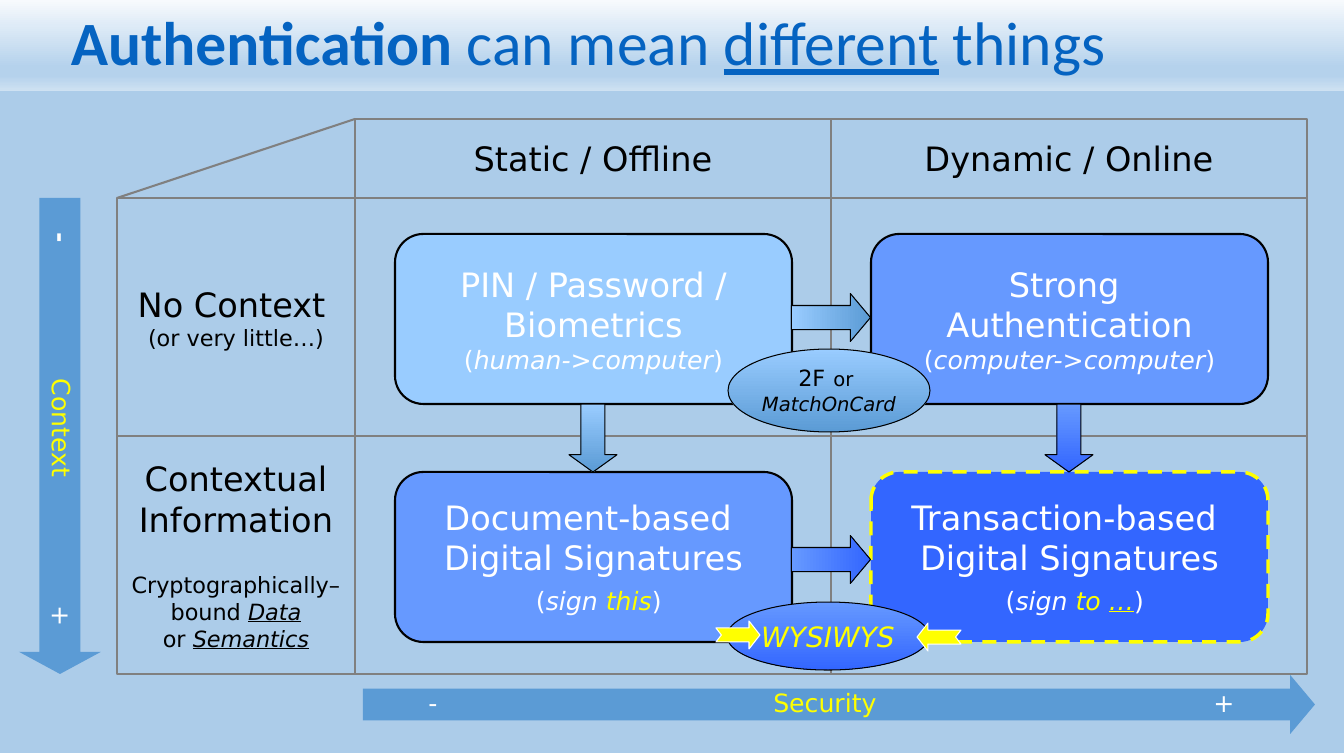
import pptx
import pptx.dml.color
import pptx.enum.dml
import pptx.enum.shapes
import pptx.enum.text
import pptx.oxml
import pptx.oxml.ns
import pptx.util
from lxml import etree

px = 9080  # EMU per px
qn = pptx.oxml.ns.qn
rgb = pptx.dml.color.RGBColor.from_string
SHAPE = pptx.enum.shapes.MSO_SHAPE
CENTER = pptx.enum.text.PP_ALIGN.CENTER
LEFT = pptx.enum.text.PP_ALIGN.LEFT

WHITE, BLACK, YELLOW, GREY = "FFFFFF", "000000", "FFFF00", "808080"
SKY, CORNFLOWER, ROYAL, STEEL = "99CCFF", "6699FF", "3366FF", "5B9BD5"
LIGHT_FADE = [(0, SKY), (100, STEEL)]
DARK_FADE = [(0, CORNFLOWER), (100, ROYAL)]
ITALIC = {"italic": True}
UNDERLINED = {"underline": True}
BOTH = {"italic": True, "underline": True}

deck = pptx.Presentation()
deck.slide_width, deck.slide_height = 1344 * px, 753 * px
slide = deck.slides.add_slide(deck.slide_layouts[6])


def add_block(preset, box, fill=None, line=None, width=1.5, adjust=(), turn=0):
    """Add a preset shape; fill is a hex colour, a list of gradient stops or None."""
    block = slide.shapes.add_shape(preset, *[length * px for length in box])
    block.shadow.inherit = False
    block.rotation = turn
    for index, value in enumerate(adjust):
        block.adjustments[index] = value
    if fill is None:
        block.fill.background()
    elif isinstance(fill, str):
        block.fill.solid()
        block.fill.fore_color.rgb = rgb(fill)
    else:
        block.fill.gradient()
        block.fill.gradient_angle = 270
        stops = next(block._element.spPr.iter(qn("a:gsLst")))
        for stop in list(stops):
            stops.remove(stop)
        for position, colour in fill:
            stop = etree.SubElement(stops, qn("a:gs"), pos=str(position * 1000))
            etree.SubElement(stop, qn("a:srgbClr"), val=colour)
    if line:
        block.line.color.rgb = rgb(line)
        block.line.width = pptx.util.Pt(width)
    else:
        block.line.fill.background()
    return block


def write(shape, lines, wrap=False, align=CENTER, margins=(10, 5, 10, 5), font="DejaVu Sans"):
    """Fill a shape with lines of runs, each (text, size, colour[, font formats])."""
    frame = shape.text_frame
    frame.word_wrap = wrap
    frame.vertical_anchor = pptx.enum.text.MSO_ANCHOR.MIDDLE
    for side, margin in zip(("left", "top", "right", "bottom"), margins):
        setattr(frame, "margin_" + side, margin * px)
    for number, line in enumerate(lines):
        paragraph = frame.add_paragraph() if number else frame.paragraphs[0]
        paragraph.alignment = align
        for text, size, colour, *formats in line:
            run = paragraph.add_run()
            run.text = text
            run.font.name = font
            run.font.size = pptx.util.Pt(size)
            run.font.color.rgb = rgb(colour)
            for name, value in (formats[0] if formats else {}).items():
                setattr(run.font, name, value)
    return frame


# Backdrop and title
backdrop = add_block(SHAPE.RECTANGLE, (0, 84, 1344, 669), STEEL)
tint = next(backdrop._element.spPr.iter(qn("a:srgbClr")))
etree.SubElement(tint, qn("a:alpha"), val="50000")
add_block(SHAPE.RECTANGLE, (0, 0, 1344, 91),
          [(0, "F7FAFD"), (74, "B5D2EC"), (83, "B5D2EC"), (100, "CEE1F2")])
title = slide.shapes.add_textbox(61 * px, 0, 1283 * px, 84 * px)
title_frame = write(title, [[
    ("Authentication ", 44, "0563C1", {"bold": True}),
    ("can mean ", 44, "0563C1"),
    ("different", 44, "0563C1", UNDERLINED),
    (" things", 44, "0563C1"),
]], wrap=True, align=LEFT, font="Calibri")
title_frame.vertical_anchor = pptx.enum.text.MSO_ANCHOR.BOTTOM
title_frame.paragraphs[0].line_spacing = 0.9

# Matrix frame
columns, rows = (355, 831), (198, 436)
matrix = add_block(SHAPE.RECTANGLE, (355, 198, 952, 476), line=GREY)
divisions = [((831, 674, 831, 198), (2, 0)),
             ((355, 436, 1307, 436), (1, 3)),
             ((117, 198, 355, 119), None)]
for ends, sites in divisions:
    division = slide.shapes.add_connector(
        pptx.enum.shapes.MSO_CONNECTOR.STRAIGHT, *[end * px for end in ends])
    if sites:
        division.begin_connect(matrix, sites[0])
        division.end_connect(matrix, sites[1])
    division.line.color.rgb = rgb(GREY)
    division.line.width = pptx.util.Pt(1.5)
    etree.SubElement(division._element.spPr, qn("a:effectLst"))

for left, heading in zip(columns, ("Static / Offline", "Dynamic / Online")):
    write(add_block(SHAPE.RECTANGLE, (left, 119, 476, 79), line=GREY),
          [[(heading, 24, BLACK)]])

row_labels = [
    ([[("No Context", 24, BLACK), (" ", 20, BLACK)],
      [("(or very little…)", 16, BLACK)]], 10),
    ([[("Contextual", 24, BLACK)],
      [("Information", 24, BLACK)],
      [("Cryptographically–bound ", 16, BLACK), ("Data", 16, BLACK, BOTH)],
      [("or ", 16, BLACK), ("Semantics", 16, BLACK, BOTH)]], 2),
]
for top, (lines, side) in zip(rows, row_labels):
    label = write(add_block(SHAPE.RECTANGLE, (117, top, 238, 238), line=GREY),
                  lines, wrap=True, margins=(side, 5, side, 5))
label.paragraphs[2].space_before = pptx.util.Pt(23)

# The four kinds of authentication
methods = [
    (0, 0, SKY, [[("PIN / Password /", 24, WHITE)],
                 [("Biometrics", 24, WHITE)],
                 [("(", 18, WHITE), ("human->computer", 18, WHITE, ITALIC), (")", 18, WHITE)]]),
    (1, 0, CORNFLOWER, [[("Strong ", 24, WHITE)],
                        [("Authentication", 24, WHITE)],
                        [("(", 18, WHITE), ("computer->computer", 18, WHITE, ITALIC),
                         (")", 18, WHITE)]]),
    (0, 1, CORNFLOWER, [[("Document-based ", 24, WHITE)],
                        [("Digital Signatures", 24, WHITE)],
                        [(" ", 24, WHITE), ("(", 18, WHITE), ("sign ", 18, WHITE, ITALIC),
                         ("this", 18, YELLOW, ITALIC), (")", 18, WHITE)]]),
    (1, 1, ROYAL, [[("Transaction-based ", 24, WHITE)],
                   [("Digital Signatures", 24, WHITE)],
                   [(" ", 24, WHITE), ("(", 18, WHITE), ("sign ", 18, WHITE, ITALIC),
                    ("to ", 18, YELLOW, ITALIC), ("…", 18, YELLOW, BOTH), (")", 18, WHITE)]]),
]
for column, row, fill, lines in methods:
    method = add_block(SHAPE.FLOWCHART_ALTERNATE_PROCESS,
                       (columns[column] + 40, rows[row] + 36, 397, 170), fill, BLACK)
    write(method, lines)
method.line.color.rgb = rgb(YELLOW)
method.line.width = pptx.util.Pt(2.5)
method.line.dash_style = pptx.enum.dml.MSO_LINE.DASH

# Axis arrows, with signs and name centred on tab stops
axes = [
    ("Security", (363, 675, 952, 59), (0.54, 0.42), 0, (70, 462, 861), {}),
    ("Context", (-178, 395, 476, 82), (0.5, 0.27), 90, (40, 230, 418), {"bold": True}),
]
for name, box, adjust, turn, stops, minus in axes:
    axis = add_block(SHAPE.RIGHT_ARROW, box, STEEL, adjust=adjust, turn=turn)
    frame = write(axis, [[("\t-", 18, WHITE, minus), ("\t" + name, 18, YELLOW),
                          ("\t+", 18, WHITE)]],
                  wrap=True, align=LEFT, margins=(0, 1, 0, 5))
    tabs = etree.SubElement(frame.paragraphs[0]._p.get_or_add_pPr(), qn("a:tabLst"))
    for stop in stops:
        etree.SubElement(tabs, qn("a:tab"), pos=str(stop * px), algn="ctr")

# Steps between the methods
steps = [((569, 404, 48, 68), 0.36, 0, LIGHT_FADE),
         ((1045, 404, 48, 68), 0.36, 0, DARK_FADE),
         ((807, 278, 48, 79), 0.42, 270, LIGHT_FADE),
         ((807, 520, 48, 79), 0.42, 270, DARK_FADE)]
for box, head, turn, fade in steps:
    add_block(SHAPE.DOWN_ARROW, box, fade, BLACK, 0.75, (0.5, head), turn)

# Bridging techniques
write(add_block(SHAPE.OVAL, (728, 349, 202, 83), LIGHT_FADE, BLACK, 0.75),
      [[("2F", 16, BLACK), (" ", 18, BLACK), ("or ", 14, BLACK)],
       [("MatchOnCard", 14, BLACK, ITALIC)]], margins=(6, 1, 6, 5))
write(add_block(SHAPE.OVAL, (727, 602, 202, 68), DARK_FADE, BLACK, 0.75),
      [[("WYSIWYS", 20, YELLOW, ITALIC)]])
for left, top, turn in ((917, 623, 180), (716, 621, 0)):
    add_block(SHAPE.NOTCHED_RIGHT_ARROW, (left, top, 44, 28), YELLOW, WHITE, 0.75,
              (0.5, 0.39), turn)

deck.save("out.pptx")
